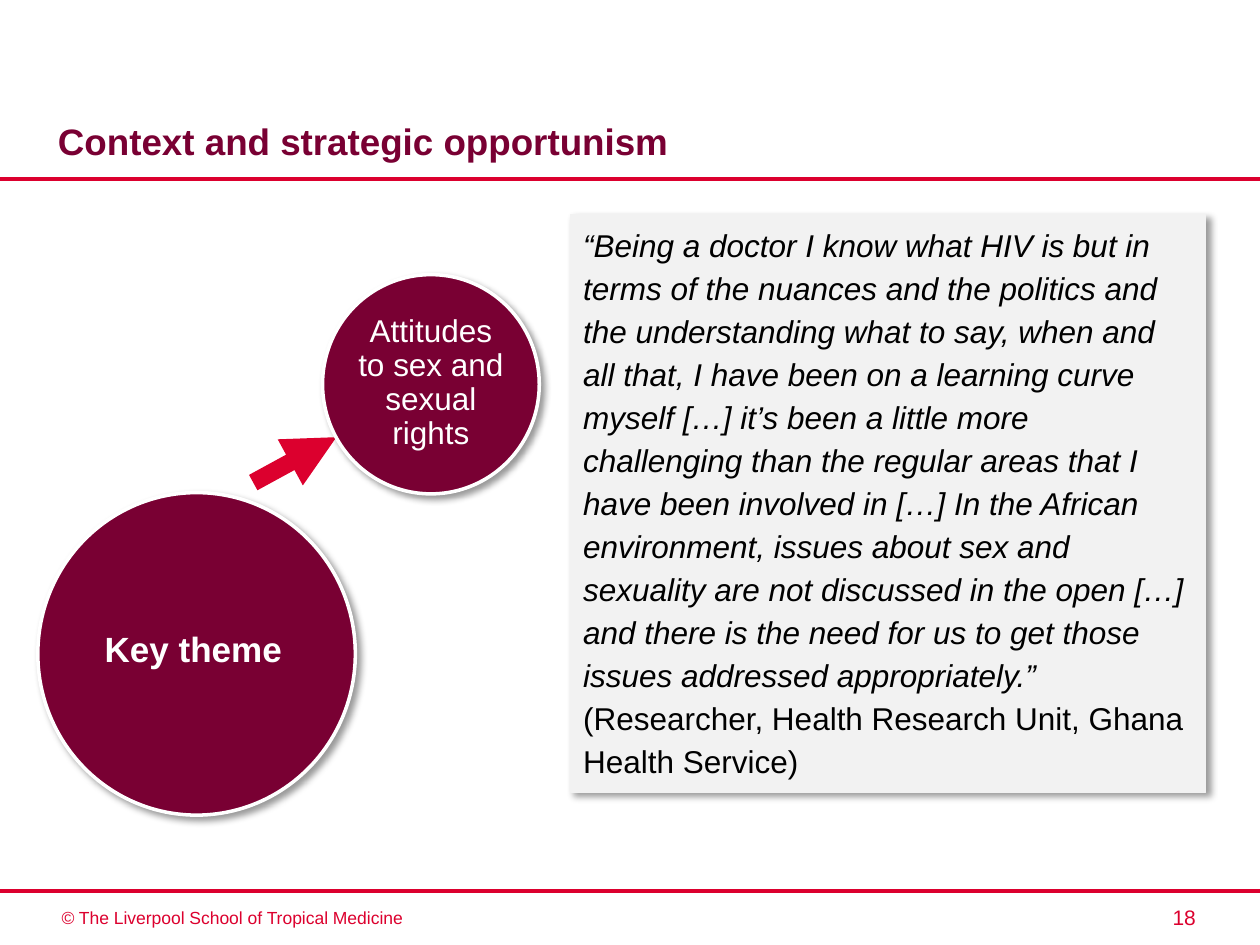
import lxml.etree
import pptx
import pptx.dml.color
import pptx.enum.shapes
import pptx.enum.text
import pptx.oxml.ns
import pptx.util

Inches = pptx.util.Inches
Pt = pptx.util.Pt
RGBColor = pptx.dml.color.RGBColor
ALIGN = pptx.enum.text.PP_ALIGN
ANCHOR = pptx.enum.text.MSO_ANCHOR
SHAPE = pptx.enum.shapes.MSO_SHAPE
STRAIGHT = pptx.enum.shapes.MSO_CONNECTOR.STRAIGHT
qn = pptx.oxml.ns.qn

RED = RGBColor(0xDC, 0x00, 0x2E)
MAROON = RGBColor(0x79, 0x00, 0x33)
GREY = RGBColor(0xF2, 0xF2, 0xF2)
WHITE = RGBColor(0xFF, 0xFF, 0xFF)
BLACK = RGBColor(0x00, 0x00, 0x00)

QUOTE = (
    "“Being a doctor I know what HIV is but in terms of the nuances and the politics "
    "and the understanding what to say, when and all that, I have been on a learning "
    "curve myself […] it’s been a little more challenging than the regular areas that "
    "I have been involved in […] In the African environment, issues about sex and "
    "sexuality are not discussed in the open […] and there is the need for us to get "
    "those issues addressed appropriately.”"
)
SPEAKER = "(Researcher, Health Research Unit, Ghana Health Service)"


def write_paragraph(paragraph, text, size, color, align=ALIGN.LEFT, spacing=1.0,
                    **font_format):
    paragraph.text = text
    paragraph.alignment = align
    paragraph.line_spacing = spacing
    font = paragraph.runs[0].font
    font.color.rgb = color
    font_format.update(name="Arial", size=Pt(size))
    for name, value in font_format.items():
        setattr(font, name, value)


def add_line(start, end, width):
    line = slide.shapes.add_connector(STRAIGHT, *map(Inches, start + end))
    line.line.color.rgb = RED
    line.line.width = Pt(width)
    lxml.etree.SubElement(line.element.spPr, qn("a:effectLst"))
    return line


presentation = pptx.Presentation()
presentation.slide_width = Inches(10)
presentation.slide_height = Inches(7.5)
slide = presentation.slides.add_slide(presentation.slide_layouts[5])

# Title and the rules above and below the content
title = slide.shapes.title
title_place = {"left": 0.36, "top": 0.67, "width": 7.08, "height": 0.67}
for name, value in title_place.items():
    setattr(title, name, Inches(value))
title.text_frame.vertical_anchor = ANCHOR.BOTTOM
write_paragraph(title.text_frame.paragraphs[0], "Context and strategic opportunism",
                21, MAROON, bold=True)
for y in (1.42, 7.07):
    add_line((0, y), (10, y), 2.25)

# Arrow from the key theme to the attitudes circle
arrow = add_line((2.01, 3.83), (2.67, 3.47), 10)
arrow_line = arrow.line._get_or_add_ln()
lxml.etree.SubElement(arrow_line, qn("a:tailEnd"), type="triangle")

# Circles and quote panel, all with the same soft shadow
panels = [
    (SHAPE.OVAL, (0.3, 3.91, 2.52, 2.56), MAROON, WHITE, 2),
    (SHAPE.OVAL, (2.56, 2.18, 1.72, 1.74), MAROON, WHITE, 2),
    (SHAPE.RECTANGLE, (4.53, 1.7, 5.04, 4.59), GREY, GREY, 0.75),
]
for kind, place, fill, outline, width in panels:
    shape = slide.shapes.add_shape(kind, *map(Inches, place))
    shape.fill.solid()
    shape.fill.fore_color.rgb = fill
    shape.line.color.rgb = outline
    shape.line.width = Pt(width)
    shape.shadow.inherit = False
    shadow = lxml.etree.SubElement(
        shape.element.spPr.find(qn("a:effectLst")), qn("a:outerShdw"),
        blurRad=str(Pt(4)), dist=str(Pt(3)), dir=str(45 * 60000),
        algn="tl", rotWithShape="0")
    shadow_color = lxml.etree.SubElement(shadow, qn("a:srgbClr"), val=str(BLACK))
    lxml.etree.SubElement(shadow_color, qn("a:alpha"), val="40000")

quote_frame = shape.text_frame
quote_frame.word_wrap = True
quote_frame.vertical_anchor = ANCHOR.TOP
write_paragraph(quote_frame.paragraphs[0], QUOTE, 18, BLACK, spacing=1.14, italic=True)
write_paragraph(quote_frame.add_paragraph(), SPEAKER, 18, BLACK, spacing=1.14)

# Circle labels and footer
labels = [
    ((2.81, 2.43, 1.22, 1.23), "Attitudes to sex and sexual rights", 0.01, ANCHOR.MIDDLE,
     {"size": 18, "color": WHITE, "align": ALIGN.CENTER, "spacing": 0.9}),
    ((0.67, 4.93, 1.73, 0.44), "Key theme", 0.1, ANCHOR.TOP,
     {"size": 20, "color": WHITE, "align": ALIGN.CENTER, "bold": True}),
    ((0.39, 7.15, 3.95, 0.27), "© The Liverpool School of Tropical Medicine", 0.1,
     ANCHOR.TOP, {"size": 10, "color": RED}),
    ((7.76, 7.13, 1.83, 0.3), "18", 0.1, ANCHOR.TOP,
     {"size": 12, "color": RED, "align": ALIGN.RIGHT}),
]
for place, text, margin, anchor, text_format in labels:
    text_frame = slide.shapes.add_textbox(*map(Inches, place)).text_frame
    frame_format = {
        "word_wrap": True, "vertical_anchor": anchor,
        "margin_left": Inches(margin), "margin_right": Inches(margin),
        "margin_top": Inches(margin / 2), "margin_bottom": Inches(margin / 2),
    }
    for name, value in frame_format.items():
        setattr(text_frame, name, value)
    write_paragraph(text_frame.paragraphs[0], text, **text_format)

presentation.save("out.pptx")
